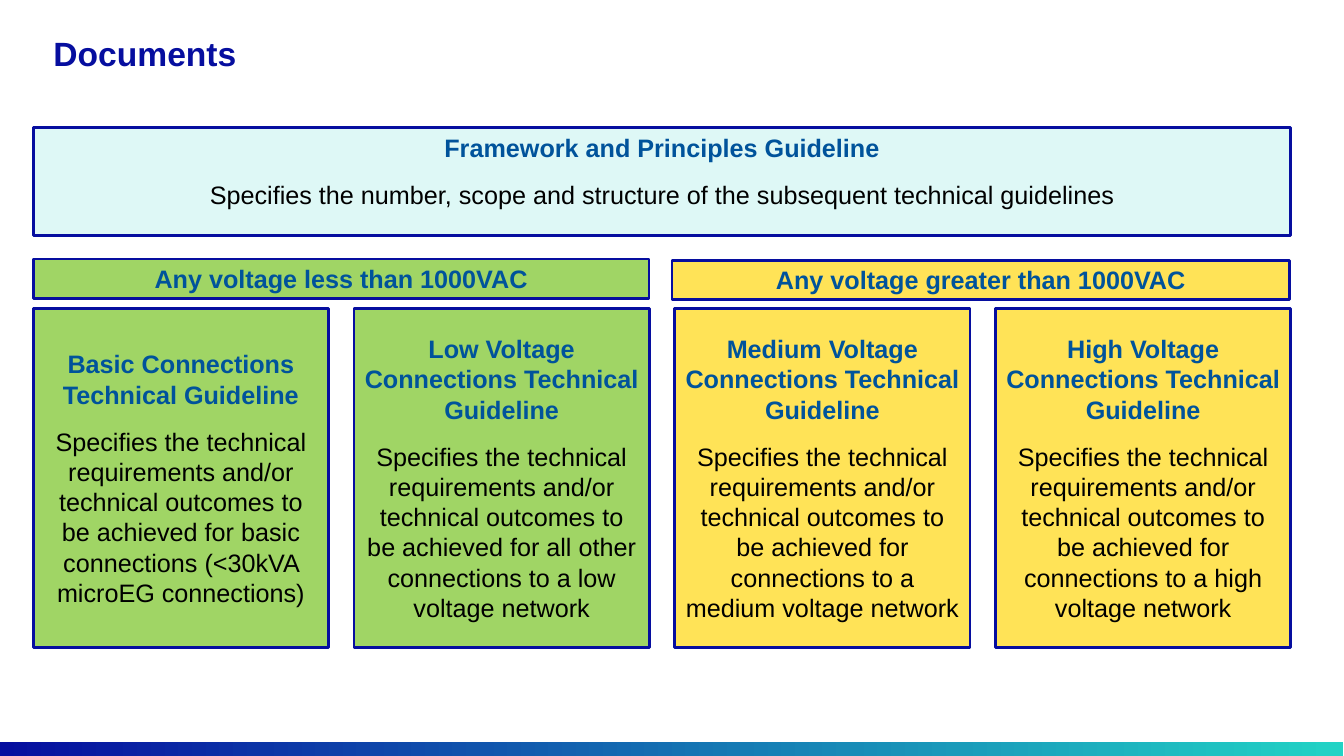
from pptx import Presentation
from pptx.dml.color import RGBColor
from pptx.enum.shapes import MSO_SHAPE
from pptx.enum.text import MSO_ANCHOR, PP_ALIGN
from pptx.util import Pt

NAVY, BLUE, BLACK = "060E9F", "00539B", "000000"
MINT, GREEN, GOLD, TEAL = "DEF8F6", "A0D565", "FFE357", "22D3C5"
LEFT, STEP, WIDE = 23.8, 229.2, 211
SPECS = "Specifies the technical requirements and/or technical outcomes to be achieved for "
CARDS = [
    ("Basic Connections", "basic connections (<30kVA microEG connections)", GREEN),
    ("Low Voltage Connections", "all other connections to a low voltage network", GREEN),
    ("Medium Voltage Connections", "connections to a medium voltage network", GOLD),
    ("High Voltage Connections", "connections to a high voltage network", GOLD),
]
BANDS = [
    ("Any voltage less than 1000VAC", LEFT, 185, 440, GREEN),
    ("Any voltage greater than 1000VAC", 480.2, 185.8, 441.4, GOLD),
]


def tint(code):
    return RGBColor.from_string(code)


def add_run(para, text, size, color, bold):
    run = para.add_run()
    run.text = text
    font = run.font
    font.name, font.size, font.bold = "Arial", Pt(size), bold
    font.color.rgb = tint(color)


def add_rect(slide, x, y, w, h):
    rect = slide.shapes.add_shape(MSO_SHAPE.RECTANGLE, Pt(x), Pt(y), Pt(w), Pt(h))
    rect.shadow.inherit = False
    return rect


def add_box(slide, x, y, w, h, color, head, body=None, anchor=MSO_ANCHOR.MIDDLE):
    box = add_rect(slide, x, y, w, h)
    box.fill.solid()
    box.fill.fore_color.rgb = tint(color)
    box.line.color.rgb = tint(NAVY)
    box.line.width = Pt(2)
    frame = box.text_frame
    frame.word_wrap = True
    frame.vertical_anchor = anchor
    para = frame.paragraphs[0]
    para.alignment = PP_ALIGN.CENTER
    add_run(para, head, 18, BLUE, True)
    if body:
        para = frame.add_paragraph()
        para.alignment = PP_ALIGN.CENTER
        para.space_before = Pt(12)
        add_run(para, body, 18, BLACK, False)


def add_title(slide, text):
    title = slide.shapes.title
    title.left, title.top, title.width, title.height = Pt(38.2), Pt(26.6), Pt(884), Pt(57)
    frame = title.text_frame
    frame.margin_left = frame.margin_right = frame.margin_top = frame.margin_bottom = 0
    frame.vertical_anchor = MSO_ANCHOR.TOP
    frame.word_wrap = True
    para = frame.paragraphs[0]
    para.alignment = PP_ALIGN.LEFT
    para.line_spacing = 0.9
    add_run(para, text, 24, NAVY, True)


def add_strip(slide):
    strip = add_rect(slide, 0, 530, 960, 10)
    strip.line.fill.background()
    strip.fill.gradient()
    strip.fill.gradient_angle = 0
    for stop, color, place in zip(strip.fill.gradient_stops, (NAVY, TEAL), (0, 1)):
        stop.color.rgb = tint(color)
        stop.position = place


def main():
    deck = Presentation()
    deck.slide_width, deck.slide_height = Pt(960.4), Pt(540)
    slide = deck.slides.add_slide(deck.slide_layouts[5])
    add_strip(slide)
    add_title(slide, "Documents")
    add_box(slide, LEFT, 91.2, 3 * STEP + WIDE, 77, MINT,
            "Framework and Principles Guideline",
            "Specifies the number, scope and structure of the subsequent technical guidelines",
            MSO_ANCHOR.TOP)
    for i, (name, scope, color) in enumerate(CARDS):
        add_box(slide, LEFT + i * STEP, 220.4, WIDE, 242, color,
                name + " Technical Guideline", SPECS + scope)
    for text, x, y, w, color in BANDS:
        add_box(slide, x, y, w, 28, color, text)
    deck.save("out.pptx")


if __name__ == "__main__":
    main()
